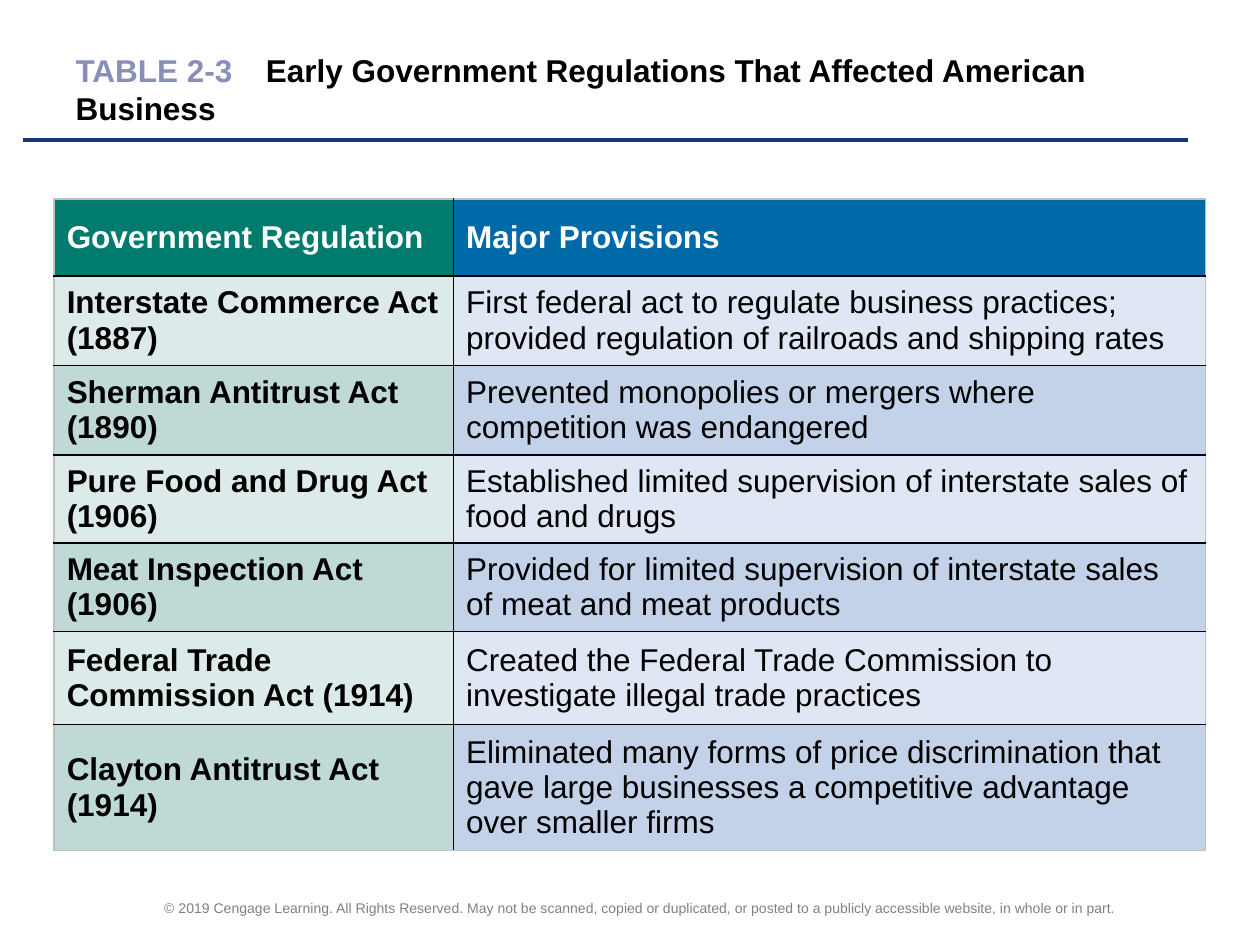
from dataclasses import dataclass

from lxml import etree
from pptx import Presentation
from pptx.dml.color import RGBColor
from pptx.enum.shapes import MSO_CONNECTOR
from pptx.enum.text import MSO_ANCHOR, MSO_AUTO_SIZE, PP_ALIGN
from pptx.oxml.ns import qn
from pptx.util import Inches, Pt

STRAIGHT = MSO_CONNECTOR.STRAIGHT
MIDDLE = MSO_ANCHOR.MIDDLE
NO_FIT = MSO_AUTO_SIZE.NONE
LEFT = PP_ALIGN.LEFT
CENTER = PP_ALIGN.CENTER
TITLE_ONLY = 5


@dataclass(frozen=True)
class Theme:
    font: str = "Arial"
    body_size: int = 18
    footer_size: int = 8
    text: str = "000000"
    label: str = "888FB8"
    footer: str = "808080"
    rule: str = "133676"
    header_text: str = "FFFFFF"
    header_fills: tuple = ("007B6D", "006AA9")
    band_fills: tuple = (("DCEBE9", "DEE7F3"), ("BFDAD6", "C3D2E9"))
    grid: str = "000000"
    edge: str = "BFBFBF"


THEME = Theme()
COLUMN_WIDTHS = (3.17, 5.97)
ROW_HEIGHTS = (0.61, 0.71, 0.71, 0.66, 0.66, 0.74, 0.94)
REGULATIONS = (
    ("Government Regulation", "Major Provisions"),
    ("Interstate Commerce Act (1887)",
     "First federal act to regulate business practices; "
     "provided regulation of railroads and shipping rates"),
    ("Sherman Antitrust Act (1890)",
     "Prevented monopolies or mergers where competition was endangered"),
    ("Pure Food and Drug Act (1906)",
     "Established limited supervision of interstate sales of food and drugs"),
    ("Meat Inspection Act (1906)",
     "Provided for limited supervision of interstate sales of meat and meat products"),
    ("Federal Trade Commission Act (1914)",
     "Created the Federal Trade Commission to investigate illegal trade practices"),
    ("Clayton Antitrust Act (1914)",
     "Eliminated many forms of price discrimination that gave large businesses "
     "a competitive advantage over smaller firms"),
)


def color(value):
    return RGBColor.from_string(value)


def style_paragraph(para, size, bold=False, tone=None, align=LEFT):
    para.alignment = align
    para.font.name = THEME.font
    para.font.size = Pt(size)
    para.font.bold = bold
    if tone:
        para.font.color.rgb = color(tone)


def add_title(page, left, top, width, height):
    title = page.shapes.title
    title.left, title.top, title.width, title.height = map(
        Inches, (left, top, width, height))
    frame = title.text_frame
    frame.auto_size = NO_FIT
    frame.word_wrap = True
    frame.vertical_anchor = MIDDLE
    para = frame.paragraphs[0]
    tabs = etree.SubElement(para._p.get_or_add_pPr(), qn("a:tabLst"))
    etree.SubElement(tabs, qn("a:tab"), pos=str(Inches(1.51)), algn="l")
    style_paragraph(para, THEME.body_size, bold=True)
    for text, tone in (
        ("TABLE 2-3", THEME.label),
        ("\tEarly Government Regulations That Affected American \tBusiness", THEME.text),
    ):
        span = para.add_run()
        span.text = text
        span.font.color.rgb = color(tone)


def add_rule(page, left, top, width):
    rule = page.shapes.add_connector(
        STRAIGHT, Inches(left), Inches(top), Inches(left + width), Inches(top))
    rule.line.color.rgb = color(THEME.rule)
    rule.line.width = Pt(2.25)
    etree.SubElement(rule._element.spPr, qn("a:effectLst"))


def add_borders(cell, outer_sides):
    properties = cell._tc.get_or_add_tcPr()
    for side in "LRTB":
        line = etree.SubElement(properties, qn(f"a:ln{side}"), w=str(Pt(1)))
        fill = etree.SubElement(line, qn("a:solidFill"))
        tone = THEME.edge if side in outer_sides else THEME.grid
        etree.SubElement(fill, qn("a:srgbClr"), val=tone)


def add_regulation_table(page, left, top):
    rows, columns = len(ROW_HEIGHTS), len(COLUMN_WIDTHS)
    table = page.shapes.add_table(
        rows, columns, Inches(left), Inches(top),
        Inches(sum(COLUMN_WIDTHS)), Inches(sum(ROW_HEIGHTS))).table
    for column, width in zip(table.columns, COLUMN_WIDTHS):
        column.width = Inches(width)
    for row_index, (height, texts) in enumerate(zip(ROW_HEIGHTS, REGULATIONS)):
        table.rows[row_index].height = Inches(height)
        header = row_index == 0
        fills = THEME.header_fills if header else THEME.band_fills[(row_index - 1) % 2]
        for column_index, text in enumerate(texts):
            cell = table.cell(row_index, column_index)
            edges = {"L": column_index == 0, "R": column_index == columns - 1,
                     "T": header, "B": row_index == rows - 1}
            add_borders(cell, [side for side, outer in edges.items() if outer])
            cell.fill.solid()
            cell.fill.fore_color.rgb = color(fills[column_index])
            cell.vertical_anchor = MIDDLE
            cell.text = text
            style_paragraph(
                cell.text_frame.paragraphs[0], THEME.body_size,
                bold=header or column_index == 0,
                tone=THEME.header_text if header else THEME.text)


def add_footer(page, left, top, width, height):
    box = page.shapes.add_textbox(*map(Inches, (left, top, width, height)))
    frame = box.text_frame
    frame.word_wrap = True
    frame.vertical_anchor = MIDDLE
    para = frame.paragraphs[0]
    para.text = (
        "© 2019 Cengage Learning. All Rights Reserved. May not be scanned, copied or "
        "duplicated, or posted to a publicly accessible website, in whole or in part.")
    style_paragraph(para, THEME.footer_size, tone=THEME.footer, align=CENTER)


def main():
    deck = Presentation()
    deck.slide_width, deck.slide_height = Inches(10), Inches(7.5)
    page = deck.slides.add_slide(deck.slide_layouts[TITLE_ONLY])
    add_footer(page, 0.75, 7.08, 8.67, 0.25)
    add_rule(page, 0.18, 1.11, 9.25)
    add_title(page, 0.5, 0.33, 9, 0.75)
    add_regulation_table(page, 0.43, 1.58)
    deck.save("out.pptx")


if __name__ == "__main__":
    main()
